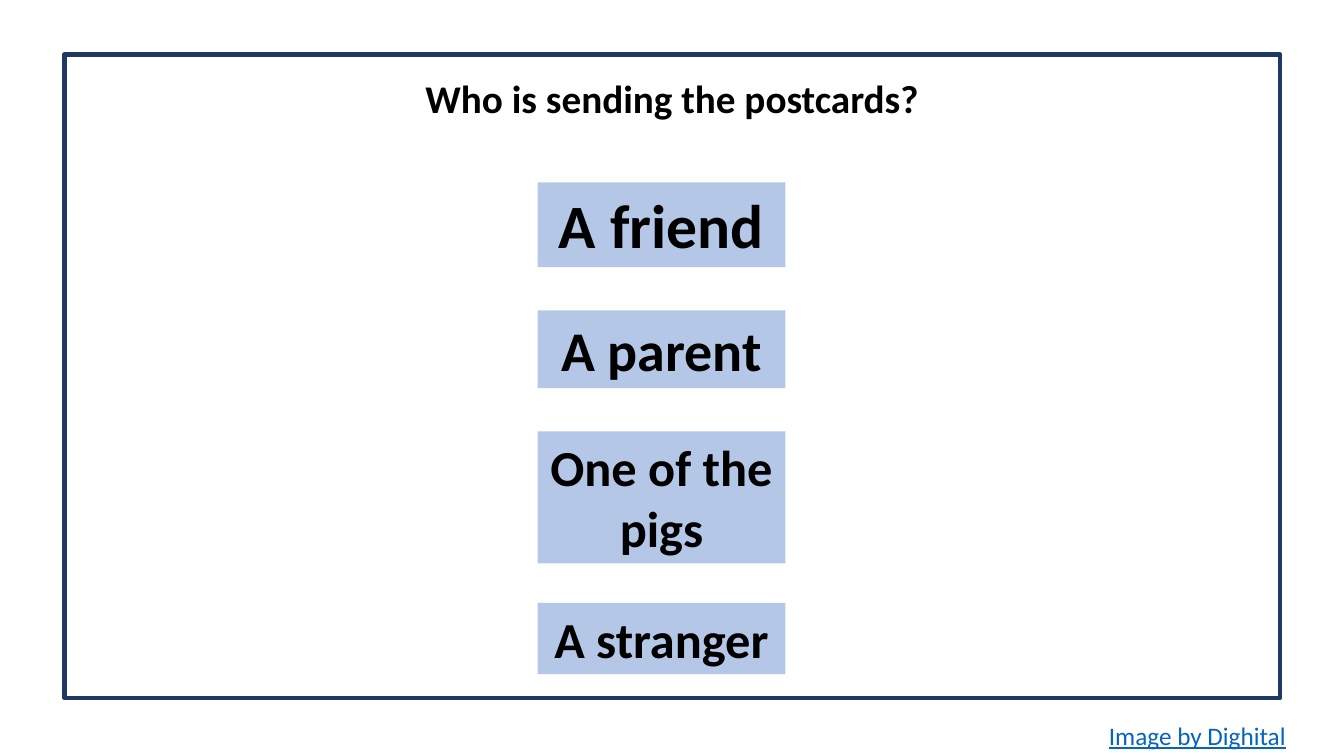
"""Build a quiz slide with a framed question and four answer boxes."""
from pptx import Presentation
from pptx.dml.color import RGBColor
from pptx.enum import shapes, text
from pptx.util import Pt

COLORS = {"white": "FFFFFF", "navy": "203864", "answer": "B4C7E7",
          "black": "000000", "link": "0563C1"}
FONT = "Calibri"
QUESTION = "Who is sending the postcards?"
CREDIT = "Image by Dighital"
ANSWERS = [
    {"content": "A friend", "size": 44, "top": 130.3, "height": 60.5},
    {"content": "A parent", "size": 40, "top": 221.8, "height": 55.4},
    {"content": "One of the pigs", "size": 36, "top": 308.2, "height": 94.3},
    {"content": "A stranger", "size": 36, "top": 430.6, "height": 50.9},
]
ANSWER_LEFT, ANSWER_WIDTH = 384, 177


def color(name):
    return RGBColor.from_string(COLORS[name])


def add_rectangle(page, left, top, width, height, fill, line=None):
    box = page.shapes.add_shape(shapes.MSO_SHAPE.RECTANGLE,
                                Pt(left), Pt(top), Pt(width), Pt(height))
    box.shadow.inherit = False
    box.fill.solid()
    box.fill.fore_color.rgb = color(fill)
    if line:
        box.line.color.rgb = color(line)
        box.line.width = Pt(3)
    else:
        box.line.fill.background()
    return box


def write(box, content, size, ink="black", bold=True, underline=False,
          align=text.PP_ALIGN.CENTER, wrap=True, grow=True, spacing=None):
    frame = box.text_frame
    frame.word_wrap = wrap
    frame.vertical_anchor = text.MSO_ANCHOR.TOP
    frame.auto_size = (text.MSO_AUTO_SIZE.SHAPE_TO_FIT_TEXT if grow
                       else text.MSO_AUTO_SIZE.NONE)
    para = frame.paragraphs[0]
    para.alignment = align
    para.line_spacing = spacing
    span = para.add_run()
    span.text = content
    span.font.name = FONT
    span.font.size = Pt(size)
    span.font.bold = bold
    span.font.underline = underline
    span.font.color.rgb = color(ink)


def main():
    deck = Presentation()
    deck.slide_width, deck.slide_height = Pt(960), Pt(540)
    page = deck.slides.add_slide(deck.slide_layouts[6])

    add_rectangle(page, 46, 39, 868.5, 459.5, "white", line="navy")
    credit = page.shapes.add_textbox(Pt(785), Pt(511), Pt(142.5), Pt(29))
    write(credit, CREDIT, 18, ink="link", bold=False, underline=True,
          align=text.PP_ALIGN.LEFT, wrap=False)
    question = page.shapes.add_textbox(Pt(120), Pt(53.5), Pt(720), Pt(47))
    write(question, QUESTION, 28, grow=False, spacing=0.9)

    for answer in ANSWERS:
        box = add_rectangle(page, ANSWER_LEFT, answer["top"], ANSWER_WIDTH,
                            answer["height"], "answer")
        write(box, answer["content"], answer["size"])

    deck.save("out.pptx")


if __name__ == "__main__":
    main()
